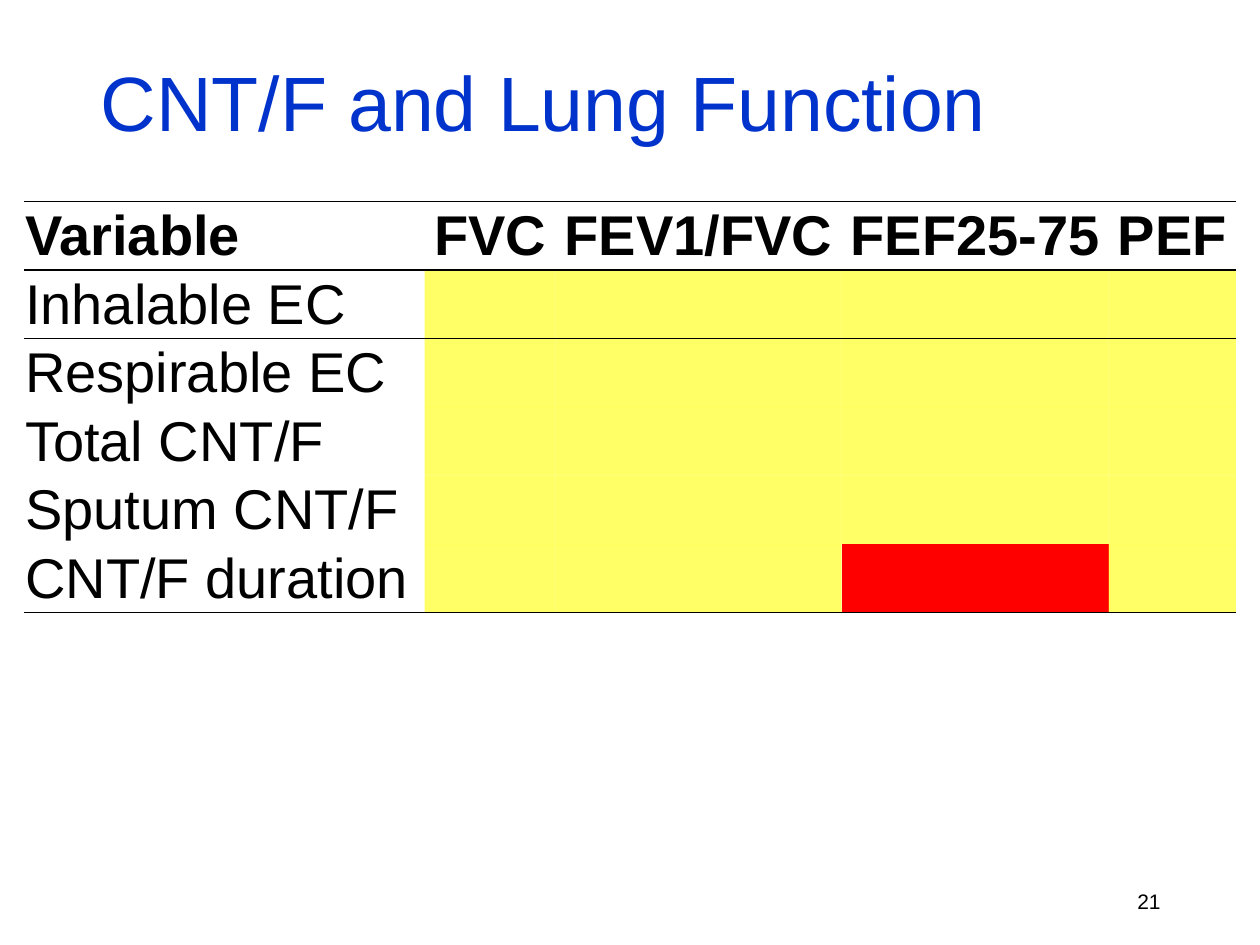
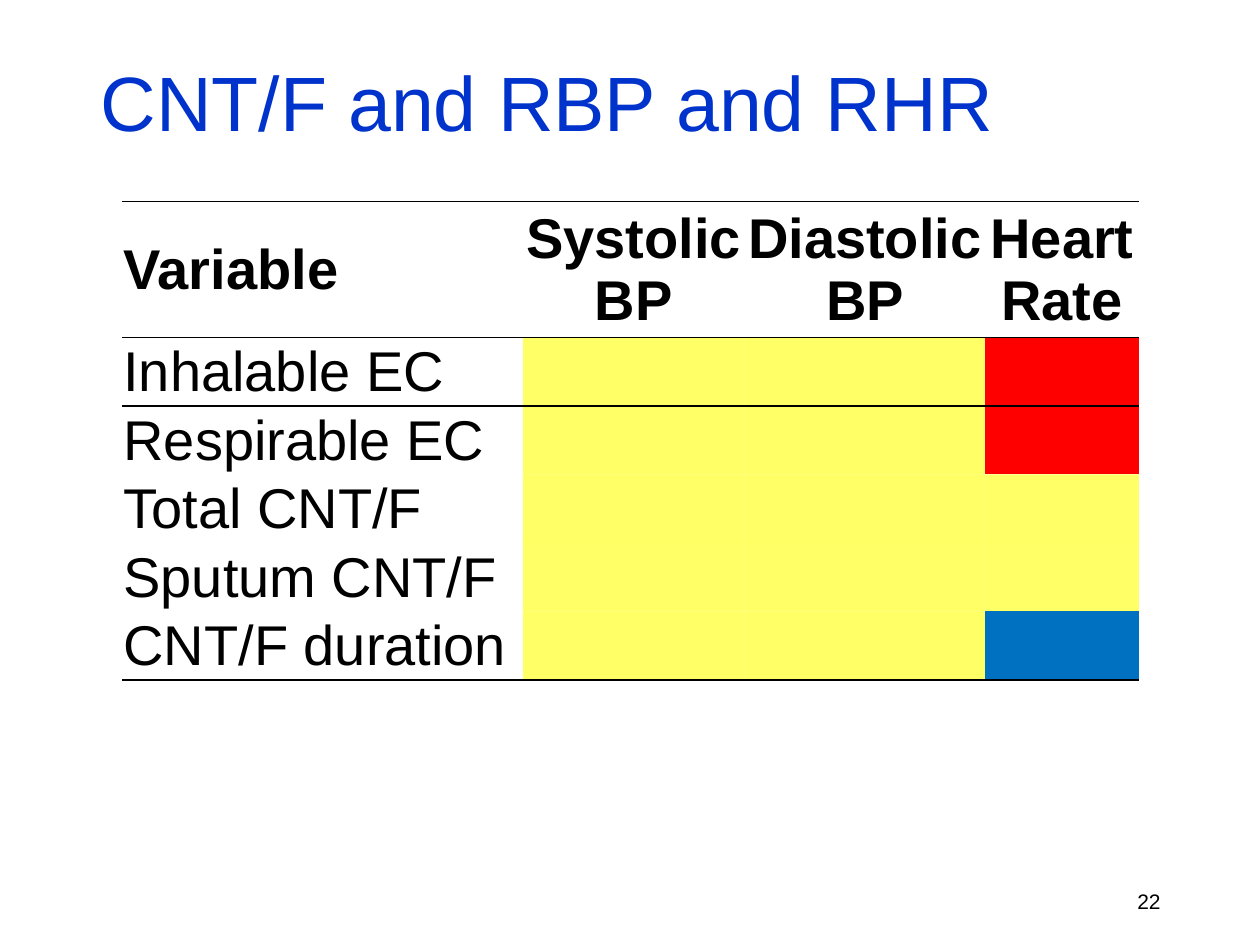
from dataclasses import dataclass

import pptx
import pptx.dml.color
import pptx.enum.text
import pptx.oxml
import pptx.oxml.ns
import pptx.util

Inches = pptx.util.Inches
Pt = pptx.util.Pt
Align = pptx.enum.text.PP_ALIGN
Anchor = pptx.enum.text.MSO_ANCHOR


@dataclass(frozen=True)
class Theme:
    font: str = "Arial"
    title_color: str = "0033CC"
    ink: str = "000000"
    neutral: str = "FFFF00"
    neutral_opacity: int = 60
    red: str = "FF0000"
    blue: str = "0070C0"
    title_size: int = 44
    table_size: int = 32
    number_size: int = 12
    rule_width: int = 1
    row_height: float = 0.51
    plain_table_style: str = "{2D5ABB26-0587-4C30-8999-92F81FD0307C}"


EXPOSURES = ["Inhalable EC", "Respirable EC", "Total CNT/F",
             "Sputum CNT/F", "CNT/F duration"]
VARIABLE_WIDTH = 3.18


def write_text(frame, text, *, theme, size, color, bold=False, align=Align.LEFT):
    frame.word_wrap = True
    paragraph = frame.paragraphs[0]
    paragraph.alignment = align
    run = paragraph.add_run()
    run.text = text
    run.font.name = theme.font
    run.font.size = Pt(size)
    run.font.bold = bold
    run.font.color.rgb = pptx.dml.color.RGBColor.from_string(color)


class Deck:
    def __init__(self, theme):
        self.theme = theme
        self.presentation = pptx.Presentation()
        self.presentation.slide_width = Inches(10)
        self.presentation.slide_height = Inches(7.5)
        self.slide = None

    def new_slide(self, title, number):
        theme = self.theme
        blank = self.presentation.slide_layouts[6]
        self.slide = self.presentation.slides.add_slide(blank)
        self.text(title, 0.7, 0.3, 8.6, 1,
                  size=theme.title_size, color=theme.title_color)
        self.text(str(number), 7.06, 6.95, 2.25, 0.4,
                  size=theme.number_size, color=theme.ink, align=Align.RIGHT)

    def text(self, text, left, top, width, height, **style):
        box = self.slide.shapes.add_textbox(
            Inches(left), Inches(top), Inches(width), Inches(height))
        box.text_frame.vertical_anchor = Anchor.MIDDLE
        write_text(box.text_frame, text, theme=self.theme, **style)

    def findings(self, left, outcomes, highlights, header_lines=1):
        """Draw exposures against outcomes ({name: column width}).

        highlights maps (exposure, outcome) to a colour; other cells are neutral.
        """
        theme = self.theme
        widths = [VARIABLE_WIDTH, *outcomes.values()]
        heights = [theme.row_height * header_lines]
        heights += [theme.row_height] * len(EXPOSURES)
        frame = self.slide.shapes.add_table(
            len(heights), len(widths), Inches(left), Inches(1.6),
            Inches(sum(widths)), Inches(sum(heights)))
        table = frame.table
        table.first_row = table.horz_banding = False
        style_id = table._tbl.tblPr.find(pptx.oxml.ns.qn("a:tableStyleId"))
        style_id.text = theme.plain_table_style
        for column, width in zip(table.columns, widths):
            column.width = Inches(width)
        for row, height in zip(table.rows, heights):
            row.height = Inches(height)

        for index, name in enumerate(["Variable", *outcomes]):
            header = table.cell(0, index)
            self.label(header, name, bold=True,
                       align=Align.CENTER if index else Align.LEFT)
            self.rules(header, "TB")
            header.fill.background()

        for row, exposure in enumerate(EXPOSURES, start=1):
            sides = {1: "T", len(EXPOSURES): "B"}.get(row, "")
            for index, outcome in enumerate([None, *outcomes]):
                cell = table.cell(row, index)
                self.rules(cell, sides)
                if outcome is None:
                    self.label(cell, exposure)
                    cell.fill.background()
                else:
                    self.shade(cell, highlights.get((exposure, outcome)))

    def label(self, cell, text, **style):
        cell.vertical_anchor = Anchor.MIDDLE
        cell.margin_left = cell.margin_top = cell.margin_right = Inches(0.01)
        cell.margin_bottom = 0
        write_text(cell.text_frame, text, theme=self.theme,
                   size=self.theme.table_size, color=self.theme.ink, **style)

    def rules(self, cell, sides):
        """Add horizontal borders; call before filling the cell."""
        properties = cell._tc.get_or_add_tcPr()
        for side in sides:
            properties.append(pptx.oxml.parse_xml(
                f'<a:ln{side} {pptx.oxml.ns.nsdecls("a")} '
                f'w="{Pt(self.theme.rule_width)}"><a:solidFill>'
                f'<a:srgbClr val="{self.theme.ink}"/></a:solidFill></a:ln{side}>'))

    def shade(self, cell, highlight):
        cell.fill.solid()
        cell.fill.fore_color.rgb = pptx.dml.color.RGBColor.from_string(
            highlight or self.theme.neutral)
        if highlight is None:
            fill = cell._tc.tcPr.find(pptx.oxml.ns.qn("a:solidFill"))
            fill[0].append(pptx.oxml.parse_xml(
                f'<a:alpha {pptx.oxml.ns.nsdecls("a")} '
                f'val="{self.theme.neutral_opacity * 1000}"/>'))


def main():
    theme = Theme()
    deck = Deck(theme)

    deck.new_slide("CNT/F and Lung Function", 21)
    deck.findings(
        0.19,
        {"FVC": 1.04, "FEV1/FVC": 2.27, "FEF25-75": 2.12, "PEF": 1.01},
        {("CNT/F duration", "FEF25-75"): theme.red})

    deck.new_slide("CNT/F and RBP and RHR", 22)
    deck.findings(
        0.97,
        {"Systolic BP": 1.76, "Diastolic BP": 1.91, "Heart Rate": 1.22},
        {("Inhalable EC", "Heart Rate"): theme.red,
         ("Respirable EC", "Heart Rate"): theme.red,
         ("CNT/F duration", "Heart Rate"): theme.blue},
        header_lines=2)

    deck.presentation.save("out.pptx")


if __name__ == "__main__":
    main()
